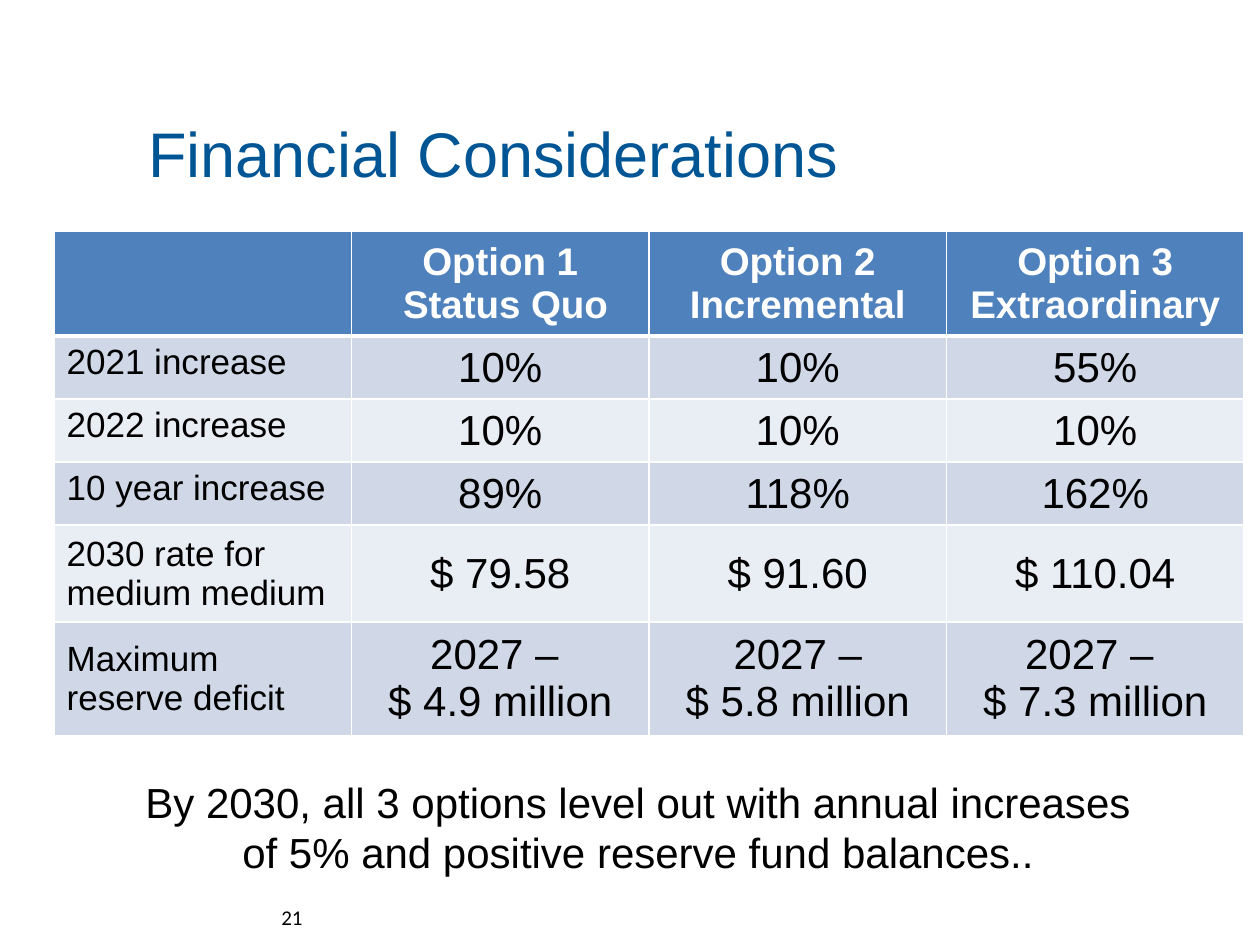
from pptx import Presentation
from pptx.dml.color import RGBColor
from pptx.enum import text
from pptx.oxml import parse_xml
from pptx.oxml.ns import nsdecls
from pptx.util import Pt

SCALE = 914400 / 126  # EMU in one px
MID, TOP = text.MSO_ANCHOR.MIDDLE, text.MSO_ANCHOR.TOP
LEFT, CENTER, RIGHT = text.PP_ALIGN.LEFT, text.PP_ALIGN.CENTER, text.PP_ALIGN.RIGHT

THEME = {
    "title": {"size": Pt(36), "name": "Arial", "color": "005595"},
    "head": {"size": Pt(22), "name": "Arial", "color": "FFFFFF", "bold": True},
    "label": {"size": Pt(20), "name": "Arial", "color": "000000", "bold": False},
    "value": {"size": Pt(24), "name": "Arial", "color": "000000", "bold": False},
    "page": {"size": Pt(12), "name": "Calibri", "color": "000000"},
    "fills": {"head": "4F81BD", "odd": "D0D8E8", "even": "E9EDF4"},
    "rule": "FFFFFF",
}

ROWS = [
    ["", "Option 1\n Status Quo", "Option 2\nIncremental", "Option 3\nExtraordinary"],
    ["2021 increase", "10%", "10%", "55%"],
    ["2022 increase", "10%", "10%", "10%"],
    ["10 year increase", "89%", "118%", "162%"],
    ["2030 rate for medium medium", "$ 79.58", "$ 91.60", "$ 110.04"],
    ["Maximum reserve deficit", "2027 – \n$ 4.9 million", "2027 –\n$ 5.8 million",
     "2027 – \n$ 7.3 million"],
]


def px(n):
    return round(n * SCALE)


def write(frame, words, style, align):
    frame.text = words
    for para in frame.paragraphs:
        para.alignment = align
        for key, val in THEME[style].items():
            if key == "color":
                para.font.color.rgb = RGBColor.from_string(val)
            else:
                setattr(para.font, key, val)
            for run in para.runs:
                if key == "color":
                    run.font.color.rgb = RGBColor.from_string(val)
                else:
                    setattr(run.font, key, val)


def add_text(slide, box, words, style, align=LEFT, anchor=MID):
    frame = slide.shapes.add_textbox(*map(px, box)).text_frame
    frame.word_wrap = True
    frame.vertical_anchor = anchor
    write(frame, words, style, align)


def add_rules(cell, row):
    # The line between header and body is thicker
    wide = {"L": 1, "R": 1, "T": 3 if row == 1 else 1, "B": 3 if row == 0 else 1}
    for side, size in wide.items():
        cell._tc.get_or_add_tcPr().append(parse_xml(
            f'<a:ln{side} {nsdecls("a")} w="{Pt(size)}"><a:solidFill>'
            f'<a:srgbClr val="{THEME["rule"]}"/></a:solidFill></a:ln{side}>'))


def add_grid(slide, box, high):
    shape = slide.shapes.add_table(len(ROWS), len(ROWS[0]), *map(px, box))
    grid = shape.table
    for r, line in enumerate(ROWS):
        grid.rows[r].height = px(high)
        band = "head" if r == 0 else ("odd" if r % 2 else "even")
        for c, words in enumerate(line):
            cell = grid.cell(r, c)
            add_rules(cell, r)
            cell.fill.solid()
            cell.fill.fore_color.rgb = RGBColor.from_string(THEME["fills"][band])
            # Short row labels sit at the top of their cells
            cell.vertical_anchor = TOP if c == 0 and r < 4 else MID
            style = "head" if r == 0 else ("value" if c else "label")
            write(cell.text_frame, words, style, CENTER if c else LEFT)
    shape.height = px(box[3])


def main():
    deck = Presentation()
    deck.slide_width, deck.slide_height = px(1260), px(945)
    slide = deck.slides.add_slide(deck.slide_layouts[6])

    # Title
    add_text(slide, (136, 73, 1134, 158), "Financial Considerations", "title")
    # Options table
    add_grid(slide, (54, 231, 1190, 504), 52)
    # Page number
    add_text(slide, (136, 892, 179, 50), "21", "page", RIGHT)
    # Closing remark
    add_text(slide, (132, 770, 1012, 115),
             "By 2030, all 3 options level out with annual increases "
             "of 5% and positive reserve fund balances..", "value", CENTER, TOP)

    deck.save("out.pptx")


if __name__ == "__main__":
    main()
